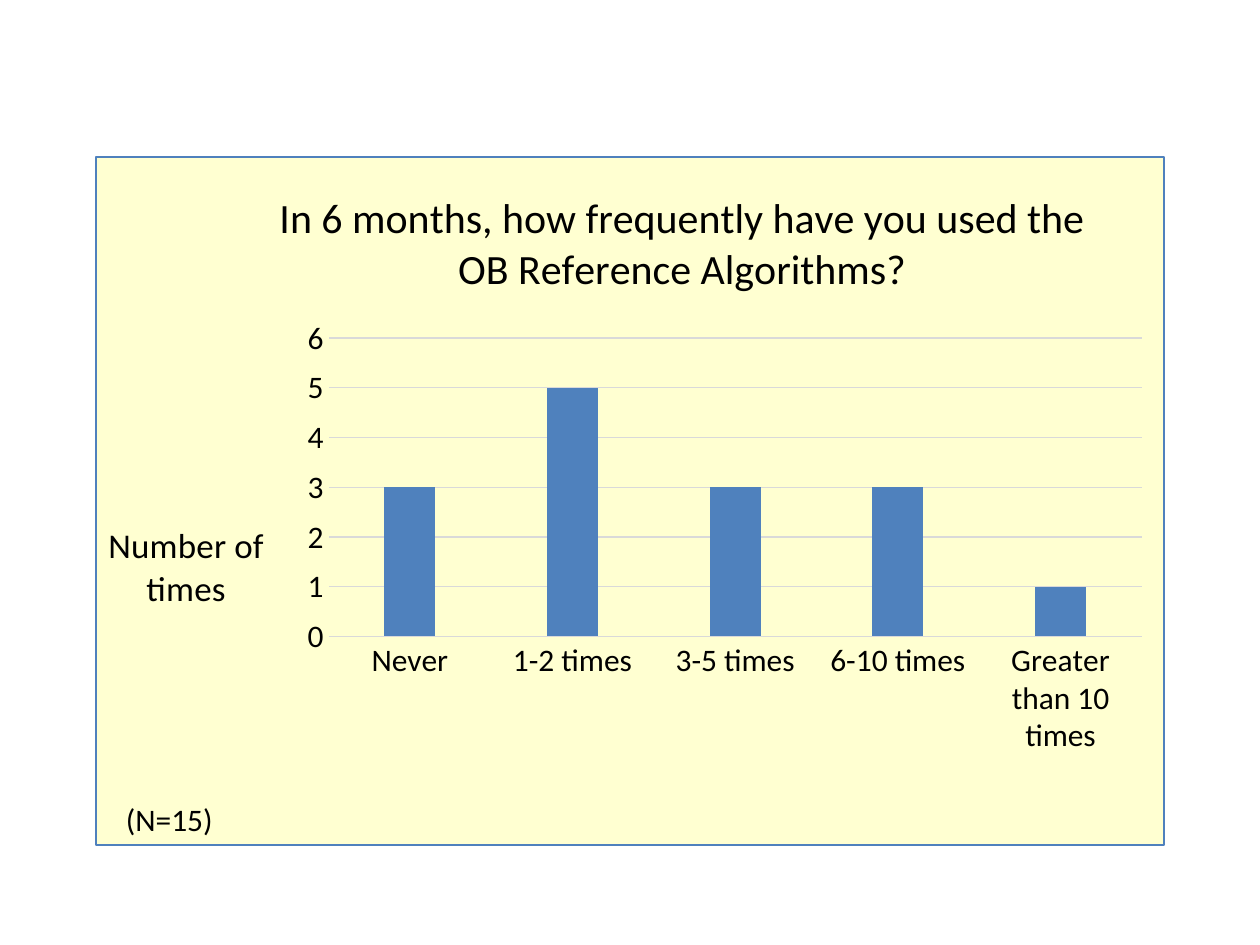
from lxml import etree
from pptx import Presentation, util as u
from pptx.chart.data import CategoryChartData
from pptx.dml.color import RGBColor
from pptx.enum import chart as ch
from pptx.oxml import parse_xml
from pptx.oxml.ns import nsdecls, qn

SCALE = 9525  # EMU per px, 96 px to the inch
FONT = "Calibri"
COLORS = {"text": "000000", "bar": "4F81BD", "grid": "D9D9D9", "panel": "FFFF00"}
PANEL_OPACITY = 18


def px(value):
    return u.Emu(value * SCALE)


def rgb(name):
    return RGBColor.from_string(COLORS[name])


def style_font(font, size):
    font.name, font.size, font.bold = FONT, u.Pt(size), False
    font.color.rgb = rgb("text")


def make_layout(box, left, top, width=None, height=None):
    """Manual chart layout from px measured inside the chart box."""
    layout = etree.Element(qn("c:layout"))
    manual = etree.SubElement(layout, qn("c:manualLayout"))
    entries = [("xMode", "edge"), ("yMode", "edge"),
               ("x", left / box[2]), ("y", top / box[3])]
    if width:
        entries.insert(0, ("layoutTarget", "inner"))
        entries += [("w", width / box[2]), ("h", height / box[3])]
    for tag, value in entries:
        shown = value if isinstance(value, str) else f"{value:.3f}"
        etree.SubElement(manual, qn("c:" + tag)).set("val", shown)
    return layout


def set_title(title, words, box, *, left, top, size):
    frame = title.text_frame
    para = frame.paragraphs[0]
    span = para.add_run()
    span.text = words
    style_font(para.font, size)
    style_font(span.font, size)
    frame._txBody.find(qn("a:bodyPr")).set("rot", "0")
    element = title._element
    for old in element.findall(qn("c:layout")):
        element.remove(old)
    element.find(qn("c:tx")).addnext(make_layout(box, left, top))


def style_panel(chart):
    """Pale see-through background with a coloured border."""
    panel = parse_xml(
        f'<c:spPr {nsdecls("c", "a")}><a:solidFill><a:srgbClr val="{COLORS["panel"]}">'
        f'<a:alpha val="{PANEL_OPACITY * 1000}"/></a:srgbClr></a:solidFill>'
        f'<a:ln w="{u.Pt(1.25)}"><a:solidFill><a:srgbClr val="{COLORS["bar"]}"/>'
        '</a:solidFill></a:ln></c:spPr>')
    chart._chartSpace.find(qn("c:chart")).addnext(panel)


def style_axes(chart):
    category, value = chart.category_axis, chart.value_axis
    for axis in (category, value):
        axis.major_tick_mark = axis.minor_tick_mark = ch.XL_TICK_MARK.NONE
        style_font(axis.tick_labels.font, 18)
    value.minimum_scale, value.maximum_scale, value.major_unit = 0, 6, 1
    value.has_major_gridlines = True
    value.format.line.fill.background()
    for line in (category.format.line, value.major_gridlines.format.line):
        line.color.rgb = rgb("grid")
        line.width = u.Pt(0.75)


def add_usage_chart(page, box):
    data = CategoryChartData()
    data.categories = ["Never", "1-2 times", "3-5 times", "6-10 times",
                       "Greater than 10 times"]
    data.add_series("Series 1", (3, 5, 3, 3, 1))
    chart = page.shapes.add_chart(
        ch.XL_CHART_TYPE.COLUMN_CLUSTERED, *map(px, box), data).chart
    style_font(chart.font, 18)
    chart.has_legend = False
    style_panel(chart)
    style_axes(chart)

    # Bars
    plot = chart.plots[0]
    plot.gap_width, plot.overlap, plot.vary_by_categories = 219, -27, False
    fill = plot.series[0].format.fill
    fill.solid()
    fill.fore_color.rgb = rgb("bar")

    # Headings
    set_title(chart.chart_title,
              "In 6 months, how frequently have you used the OB Reference Algorithms?",
              box, left=135, top=19, size=24)
    set_title(chart.value_axis.axis_title, "Number of times",
              box, left=5, top=274, size=20)
    set_title(chart.category_axis.axis_title, "(N=15)",
              box, left=19, top=488, size=18)

    # Plot area
    area = chart._chartSpace.find(qn("c:chart")).find(qn("c:plotArea"))
    for old in area.findall(qn("c:layout")):
        area.remove(old)
    area.insert(0, make_layout(box, 178, 139, 621, 229))


def main():
    deck = Presentation()
    deck.slide_width, deck.slide_height = px(960), px(720)
    page = deck.slides.add_slide(deck.slide_layouts[6])
    add_usage_chart(page, (72, 119, 816, 528))
    deck.save("out.pptx")


if __name__ == "__main__":
    main()
